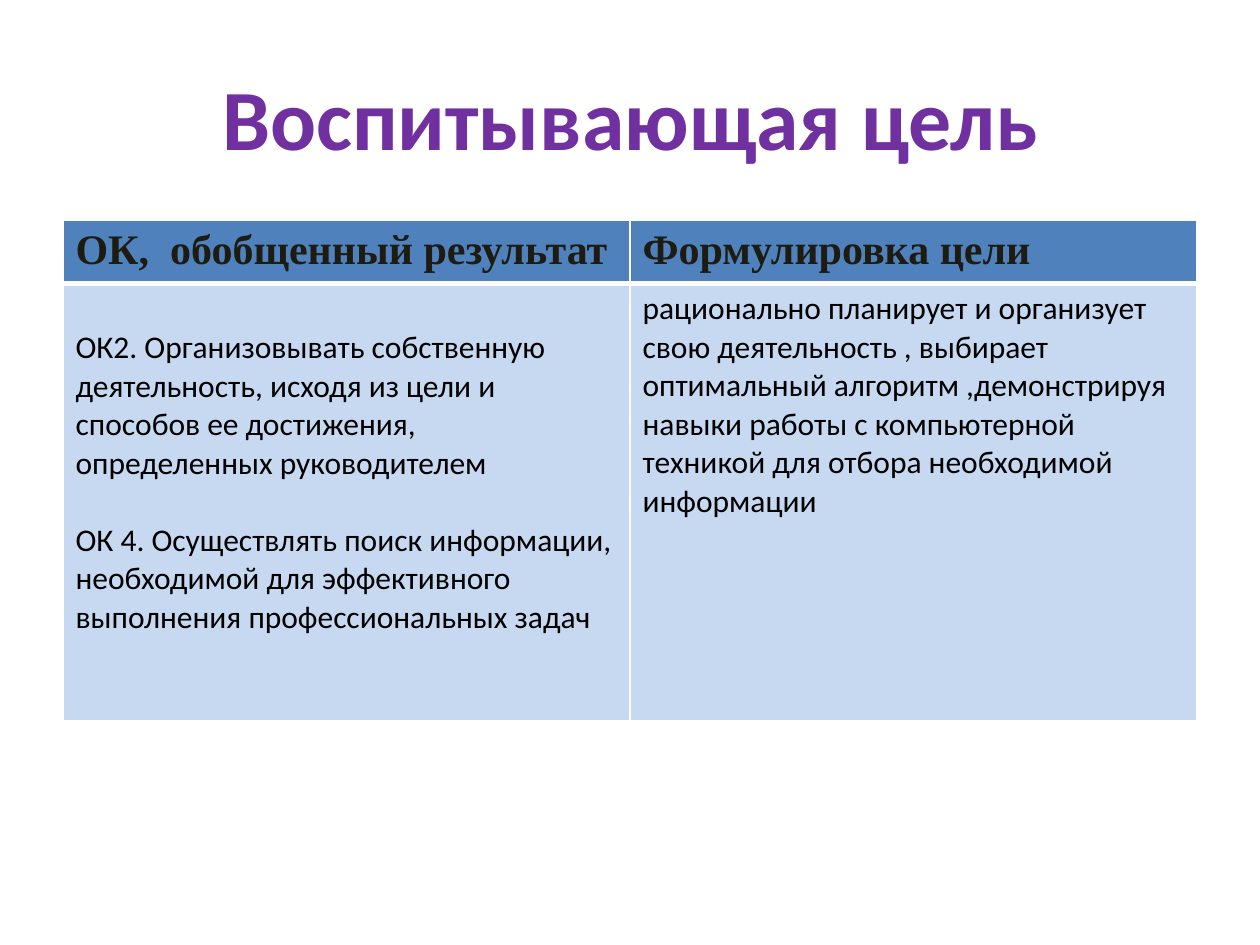
from lxml import etree
from pptx import Presentation
from pptx.dml.color import RGBColor
from pptx.enum.text import MSO_ANCHOR, PP_ALIGN
from pptx.oxml.ns import qn
from pptx.util import Inches, Pt

CENTER = PP_ALIGN.CENTER
MIDDLE = MSO_ANCHOR.MIDDLE

COLORS = {
    "title": "7030A0",
    "head": "4F81BD",
    "head_text": "1E1C11",
    "body": "C6D9F1",
    "body_text": "000000",
    "line": "FFFFFF",
}

HEADS = ["ОК,  обобщенный результат", "Формулировка цели"]
SKILLS = [
    "ОК2. Организовывать собственную деятельность, исходя из цели и "
    "способов ее достижения, определенных руководителем",
    "ОК 4. Осуществлять поиск информации, необходимой для эффективного "
    "выполнения профессиональных задач",
]
GOALS = [
    "рационально планирует и организует  свою деятельность , выбирает "
    "оптимальный алгоритм ,демонстрируя навыки работы с компьютерной "
    "техникой для отбора необходимой информации",
]


def color(name):
    return RGBColor.from_string(COLORS[name])


def style(para, face, size, tint, bold):
    font = para.font
    font.name, font.size, font.bold = face, Pt(size), bold
    font.color.rgb = color(tint)


def add_lines(cell, widths):
    props = cell._tc.get_or_add_tcPr()
    for side, width in widths.items():
        line = etree.SubElement(props, qn(f"a:ln{side}"), w=str(Pt(width)))
        fill = etree.SubElement(line, qn("a:solidFill"))
        etree.SubElement(fill, qn("a:srgbClr"), val=COLORS["line"])


def fill_cell(cell, texts, tint, face, size, bold, widths):
    add_lines(cell, widths)
    cell.fill.solid()
    cell.fill.fore_color.rgb = color(tint)
    cell.margin_left = cell.margin_right = Inches(0.1)
    cell.margin_top = cell.margin_bottom = Inches(0.05)
    frame = cell.text_frame
    frame.text = "\n".join(texts)
    for para in frame.paragraphs:
        style(para, face, size, tint + "_text", bold)


def add_title(slide, left, top, width, height):
    box = slide.shapes.add_textbox(left, top, width, height)
    frame = box.text_frame
    frame.word_wrap = True
    frame.vertical_anchor = MIDDLE
    frame.text = "Воспитывающая цель"
    para = frame.paragraphs[0]
    para.alignment = CENTER
    style(para, "Calibri", 49, "title", True)


def add_goals(slide, left, top, width, height):
    table = slide.shapes.add_table(2, 2, left, top, width, height).table
    head = Inches(0.5)
    table.rows[0].height = head
    table.rows[1].height = height - head
    for col in table.columns:
        col.width = width // 2

    # Header row, with a thick rule below it
    for cell, text in zip(table.rows[0].cells, HEADS):
        fill_cell(cell, [text], "head", "Times New Roman", 24, True,
                  {"L": 1, "R": 1, "T": 1, "B": 3})

    # Body row
    for cell, texts in zip(table.rows[1].cells, [SKILLS, GOALS]):
        fill_cell(cell, texts, "body", "Calibri", 18, False,
                  {"L": 1, "R": 1, "T": 3, "B": 1})

    # The skills start one line lower and stand one line apart
    skills = table.cell(1, 0)
    skills.margin_top = Inches(0.36)
    skills.text_frame.paragraphs[1].space_before = Pt(22)


def main():
    deck = Presentation()
    deck.slide_width, deck.slide_height = Inches(10), Inches(7.5)
    slide = deck.slides.add_slide(deck.slide_layouts[6])
    left, width = Inches(0.5), Inches(9)
    add_title(slide, left, Inches(0.3), width, Inches(1.25))
    add_goals(slide, left, Inches(1.75), width, Inches(3.97))
    deck.save("out.pptx")


if __name__ == "__main__":
    main()
